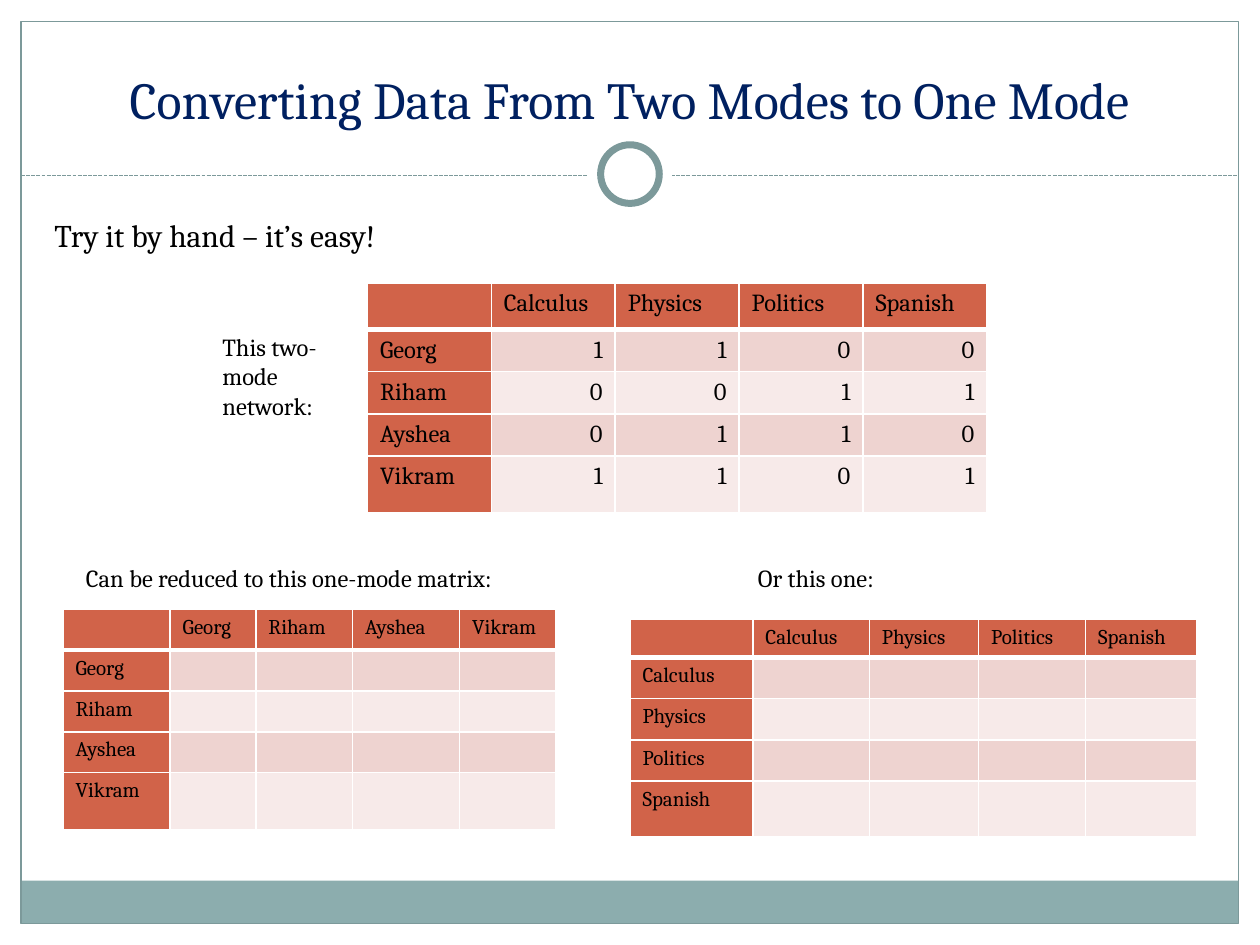
import pptx
import pptx.util
import pptx.dml.color
import pptx.enum.dml
import pptx.enum.shapes
import pptx.enum.text
import pptx.oxml
import pptx.oxml.ns

Pt = pptx.util.Pt
SHAPES = pptx.enum.shapes.MSO_SHAPE
ALIGN = pptx.enum.text.PP_ALIGN
COLORS = {
    "title": "002060",
    "text": "000000",
    "white": "FFFFFF",
    "teal": "7C999A",
    "band": "8CADAE",
    "header": "D16349",
    "odd": "EED3D0",
    "even": "F7EAE9",
}


class MatrixSlide:
    font = "Cambria"

    def __init__(self, slide):
        self.slide = slide

    def color(self, name):
        return pptx.dml.color.RGBColor.from_string(COLORS[name])

    def style(self, paragraph, size, color="text", align=ALIGN.LEFT):
        paragraph.alignment = align
        for run in paragraph.runs:
            run.font.name = self.font
            run.font.size = Pt(size)
            run.font.bold = False
            run.font.color.rgb = self.color(color)

    def title(self, text, box, size):
        heading = self.slide.shapes.title
        heading.left, heading.top, heading.width, heading.height = map(Pt, box)
        frame = heading.text_frame
        frame.text = text
        frame.word_wrap = True
        frame.auto_size = pptx.enum.text.MSO_AUTO_SIZE.NONE
        frame.vertical_anchor = pptx.enum.text.MSO_ANCHOR.BOTTOM
        self.style(frame.paragraphs[0], size, "title", ALIGN.CENTER)

    def label(self, text, box, size=14):
        frame = self.slide.shapes.add_textbox(*map(Pt, box)).text_frame
        frame.word_wrap = True
        frame.text = text
        for paragraph in frame.paragraphs:
            self.style(paragraph, size)

    def shape(self, kind, box, fill=None, line=None, weight=0.75):
        figure = self.slide.shapes.add_shape(kind, *map(Pt, box))
        figure.shadow.inherit = False
        if fill:
            figure.fill.solid()
            figure.fill.fore_color.rgb = self.color(fill)
        else:
            figure.fill.background()
        if line:
            figure.line.color.rgb = self.color(line)
            figure.line.width = Pt(weight)
        else:
            figure.line.fill.background()

    def dashed_rule(self, left, right, top):
        rule = self.slide.shapes.add_connector(
            pptx.enum.shapes.MSO_CONNECTOR.STRAIGHT, Pt(left), Pt(top), Pt(right), Pt(top))
        rule.line.color.rgb = self.color("teal")
        rule.line.width = Pt(0.75)
        rule.line.dash_style = pptx.enum.dml.MSO_LINE.SQUARE_DOT
        pptx.oxml.ns.qn("a:effectLst")
        rule._element.spPr.append(self.xml("<a:effectLst %s/>"))

    def xml(self, template):
        return pptx.oxml.parse_xml(template % pptx.oxml.ns.nsdecls("a"))

    def borders(self, cell, top, bottom):
        properties = cell._tc.get_or_add_tcPr()
        for place, (side, weight) in enumerate(
                [("L", 1), ("R", 1), ("T", top), ("B", bottom)]):
            properties.insert(place, self.xml(
                f'<a:ln{side} %s w="{Pt(weight)}"><a:solidFill>'
                f'<a:srgbClr val="{COLORS["white"]}"/></a:solidFill></a:ln{side}>'))

    def matrix(self, left, top, widths, heights, row_names, column_names, size, values=None):
        grid = self.slide.shapes.add_table(
            len(heights), len(widths), Pt(left), Pt(top),
            Pt(sum(widths)), Pt(sum(heights))).table
        grid.first_row = grid.horz_banding = False
        for column, width in zip(grid.columns, widths):
            column.width = Pt(width)
        blank = [""] * len(column_names)
        body = values or [blank] * len(row_names)
        rows = [["", *column_names]] + [[name, *line] for name, line in zip(row_names, body)]
        for r, (row, height) in enumerate(zip(rows, heights)):
            grid.rows[r].height = Pt(height)
            for c, value in enumerate(row):
                cell = grid.cell(r, c)
                inside = r > 0 and c > 0
                cell.text_frame.text = str(value)
                paragraph = cell.text_frame.paragraphs[0]
                self.style(paragraph, size, align=ALIGN.RIGHT if inside else ALIGN.LEFT)
                if value == "":
                    paragraph._p.get_or_add_endParaRPr().set("sz", str(size * 100))
                cell.fill.solid()
                fill = ("odd" if r % 2 else "even") if inside else "header"
                cell.fill.fore_color.rgb = self.color(fill)
                self.borders(cell, 3 if r == 1 else 1, 3 if r == 0 else 1)


def main():
    deck = pptx.Presentation()
    deck.slide_width, deck.slide_height = Pt(720), Pt(540)
    page = MatrixSlide(deck.slides.add_slide(deck.slide_layouts[5]))

    page.shape(SHAPES.RECTANGLE, (11.75, 503.25, 695.75, 24.5), fill="band")
    page.shape(SHAPES.RECTANGLE, (12, 12.25, 695.75, 515.5), line="teal")
    page.dashed_rule(12, 707.75, 100.5)
    page.shape(SHAPES.OVAL, (336, 75.5, 48, 48), fill="white")
    page.shape(SHAPES.OVAL, (343.25, 82.75, 33.5, 33.5), fill="white", line="teal", weight=4)
    page.title("Converting Data From Two Modes to One Mode", (24, 18, 672, 60), 29.7)

    students = ["Georg", "Riham", "Ayshea", "Vikram"]
    courses = ["Calculus", "Physics", "Politics", "Spanish"]
    enrolment = [[1, 1, 0, 0], [0, 0, 1, 1], [0, 1, 1, 0], [1, 1, 0, 1]]

    page.label("Try it by hand – it’s easy!", (24, 120, 312, 29), 18)
    page.label("This two-mode\nnetwork:", (120, 186, 78, 58))
    page.matrix(210, 162, [70.8] * 5, [26.4, 23.4, 23.4, 23.4, 32.4],
                students, courses, 14, enrolment)
    page.label("Can be reduced to this one-mode matrix:", (42, 318, 312, 24.5))
    page.matrix(36, 348, [61.2, 49, 55.2, 61.2, 55.2], [23.4] * 4 + [32.4],
                students, students, 12)
    page.label("Or this one:", (426, 318, 258, 24.5))
    page.matrix(360, 354, [70.2, 66.6, 62.4, 61.2, 63.4], [21.6] + [23.6] * 3 + [31.6],
                courses, courses, 12)
    deck.save("out.pptx")


if __name__ == "__main__":
    main()
